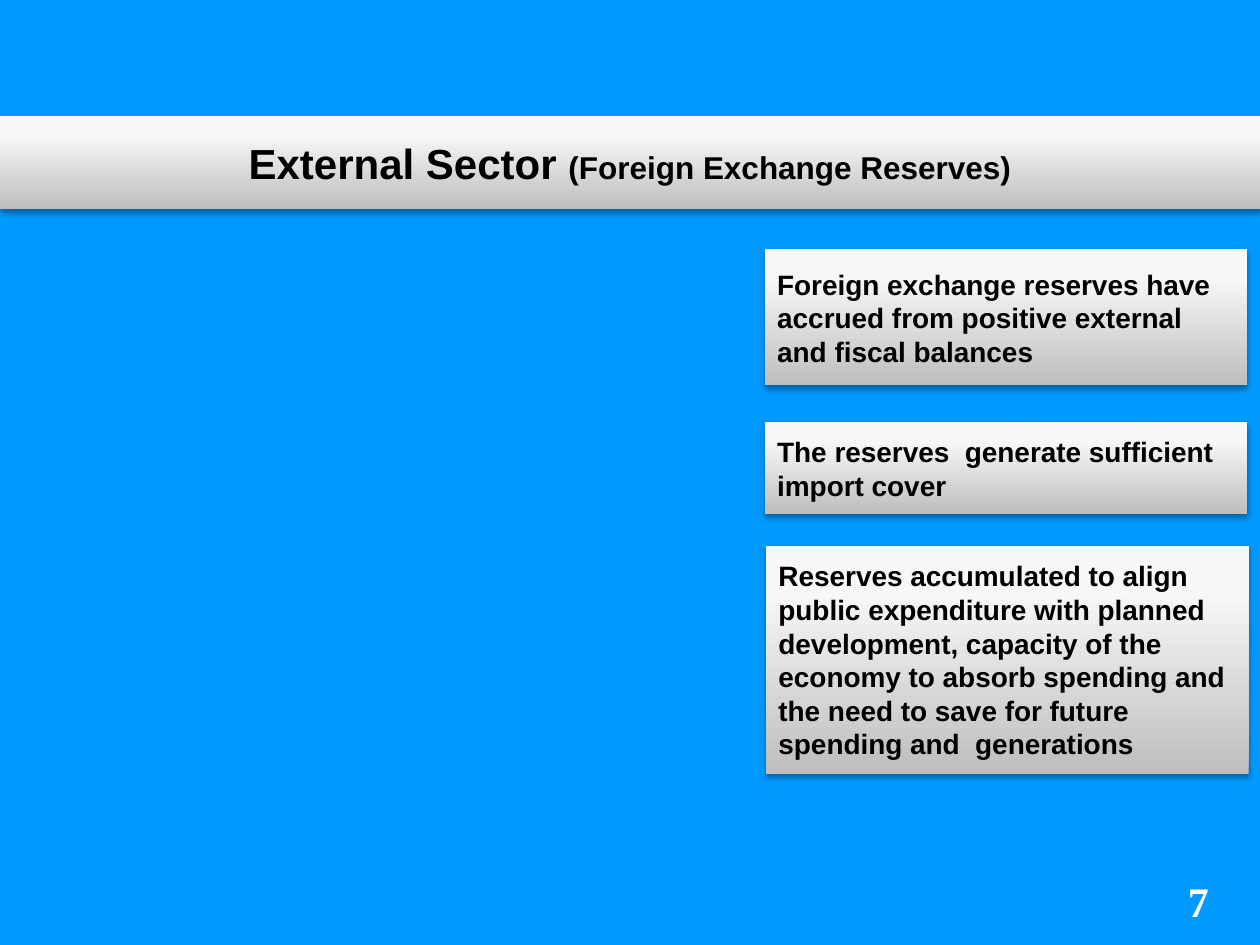
from lxml import etree
from pptx import Presentation, util as u
from pptx.dml.color import RGBColor
from pptx.enum import shapes, text
from pptx.oxml import parse_xml
from pptx.oxml.ns import qn

NS = "http://schemas.openxmlformats.org/drawingml/2006/main"
STOPS = [(0, "BEBEBE"), (80, "F7F7F7"), (100, "F8F8F8")]
SHADE = (f'<a:outerShdw xmlns:a="{NS}" blurRad="40000" dist="23000" dir="5400000" rotWithShape="0">'
         '<a:srgbClr val="000000"><a:alpha val="35000"/></a:srgbClr></a:outerShdw>')


def style(run, size, tint="000000", face="Arial"):
    run.font.size = u.Pt(size)
    run.font.name = face
    run.font.bold = True
    run.font.color.rgb = RGBColor.from_string(tint)


def panel(left, top, wide, high):
    box = slide.shapes.add_shape(shapes.MSO_SHAPE.RECTANGLE,
                                 *(u.Inches(n) for n in (left, top, wide, high)))
    box.fill.gradient()
    box.fill.gradient_angle = 90
    stops = box.fill._fill._gradFill.find(qn("a:gsLst"))
    for old in list(stops):
        stops.remove(old)
    for place, tint in STOPS:
        stop = etree.SubElement(stops, qn("a:gs"), pos=str(place * 1000))
        etree.SubElement(stop, qn("a:srgbClr"), val=tint)
    box.line.fill.background()
    box.shadow.inherit = False
    box._element.spPr.find(qn("a:effectLst")).append(parse_xml(SHADE))
    box.text_frame.word_wrap = True
    box.text_frame.vertical_anchor = text.MSO_ANCHOR.MIDDLE
    return box.text_frame


deck = Presentation()
deck.slide_width, deck.slide_height = u.Inches(10), u.Inches(7.5)
slide = deck.slides.add_slide(deck.slide_layouts[6])
slide.background.fill.solid()
slide.background.fill.fore_color.rgb = RGBColor.from_string("0099FF")

page = slide.shapes.add_textbox(u.Inches(9.33), u.Inches(6.9), u.Inches(0.67), u.Inches(0.5)).text_frame
page.word_wrap = True
page.text = "7"
style(page.paragraphs[0].runs[0], 24, "FFFFFF", "Times New Roman")

title = panel(0, 0.92, 10, 0.74).paragraphs[0]
title.alignment = text.PP_ALIGN.CENTER
for words, size in [("External Sector ", 24), ("(Foreign Exchange Reserves)", 18)]:
    run = title.add_run()
    run.text = words
    style(run, size)

NOTES = [
    (6.07, 1.98, 1.08, "Foreign exchange reserves have accrued from positive external and fiscal balances"),
    (6.07, 3.35, 0.73, "The reserves  generate sufficient import cover"),
    (6.08, 4.33, 1.81, "Reserves accumulated to align public expenditure with planned development, "
     "capacity of the economy to absorb spending and the need to save for future "
     "spending and  generations"),
]
for left, top, high, words in NOTES:
    frame = panel(left, top, 3.83, high)
    frame.text = words
    frame.paragraphs[0].alignment = text.PP_ALIGN.LEFT
    style(frame.paragraphs[0].runs[0], 16)

deck.save("out.pptx")
